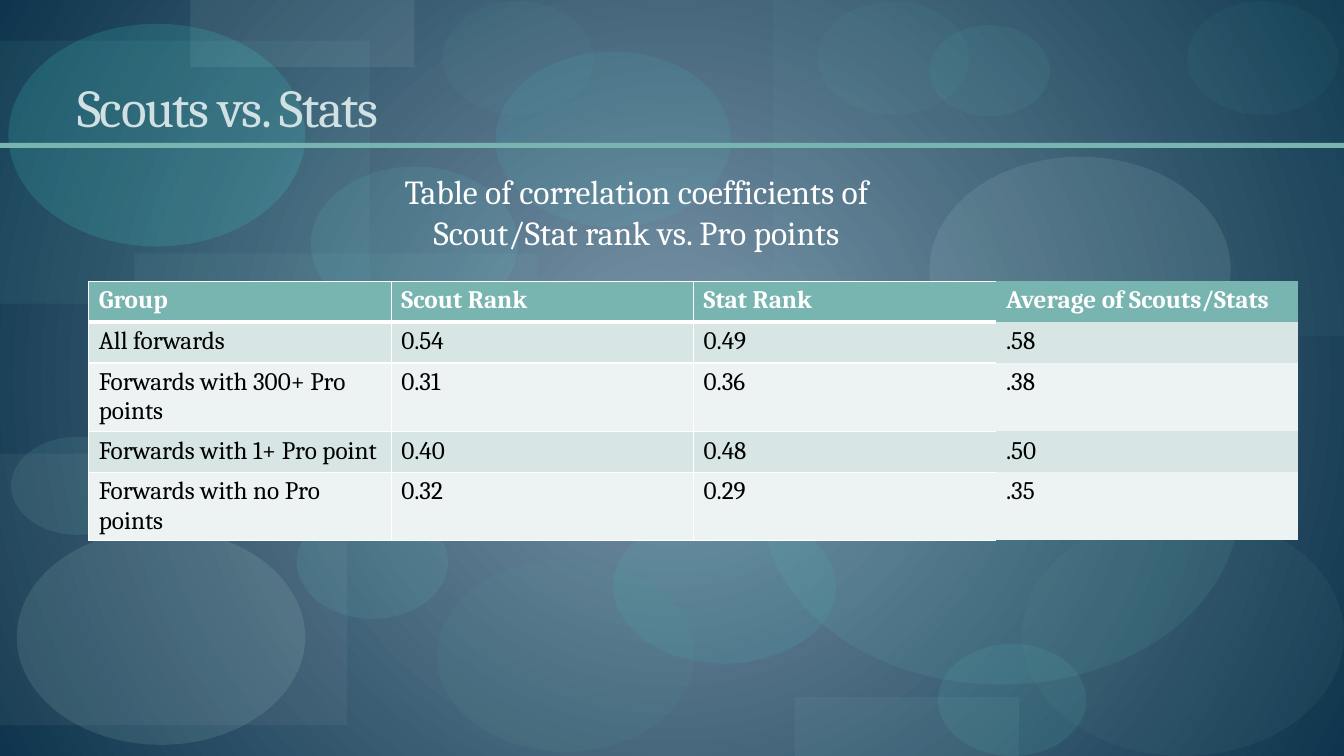
import pptx
import pptx.util
import pptx.dml.color
import pptx.enum.shapes
import pptx.enum.text
import pptx.oxml
import pptx.oxml.ns

Pt = pptx.util.Pt
FONT = "Cambria"
TEAL = "79B5B0"
WHITE = "FFFFFF"
NAMESPACE = pptx.oxml.ns.nsdecls("a")

RECTANGLES = [
    (96, 181, 288, 168, TEAL, 9),
    (552, 0, 408, 240, TEAL, 6),
    (0, 324, 248, 194, "B2B7BA", 8),
    (0, 29, 264, 188, "77D6CE", 7),
    (136, 0, 160, 48, "BED7D4", 10),
    (568, 498, 160, 42, TEAL, 10),
]
BUBBLES = [
    (312, 400, 184, 137, "549791", 13),
    (438, 188, 228, 171, "70A39E", 8),
    (670, 460, 106, 80, "65E8DC", 9),
    (664, 112, 215, 161, "C1E8E4", 11),
    (12, 378, 206, 154, "C1E8E4", 12),
    (212, 361, 108, 81, "65E8DC", 9),
    (438, 364, 159, 110, "44EADC", 8),
    (6, 17, 212, 159, "44EADC", 15),
    (8, 312, 94, 70, "97DCD6", 10),
    (222, 119, 148, 110, "65E8DC", 9),
    (354, 37, 168, 125, "44EADC", 8),
    (545, 234, 340, 255, "61CDC4", 10),
    (584, 1, 108, 81, "65E8DC", 4),
    (730, 367, 230, 173, "70A39E", 8),
    (168, 292, 125, 94, "97DCD6", 10),
    (664, 18, 86, 65, "65E8DC", 6),
    (848, 1, 108, 81, "65E8DC", 4),
    (316, 1, 108, 81, "65E8DC", 4),
]
CORRELATIONS = [
    ("Group", "Scout Rank", "Stat Rank", "Average of Scouts/Stats"),
    ("All forwards", "0.54", "0.49", ".58"),
    ("Forwards with 300+ Pro points", "0.31", "0.36", ".38"),
    ("Forwards with 1+ Pro point", "0.40", "0.48", ".50"),
    ("Forwards with no Pro points", "0.32", "0.29", ".35"),
]


def rgb(value):
    return pptx.dml.color.RGBColor.from_string(value)


def format_text(frame, size, color, bold=False):
    for para in frame.paragraphs:
        for span in para.runs:
            span.font.name = FONT
            span.font.size = Pt(size)
            span.font.bold = bold
            span.font.color.rgb = rgb(color)


def paint_background(page):
    fill = page.background.fill
    fill.gradient()
    for stop, color, position in zip(fill.gradient_stops, ("7B96AA", "0E354D"), (0, 1)):
        stop.color.rgb = rgb(color)
        stop.position = position
    linear = next(page.element.iter(pptx.oxml.ns.qn("a:lin")))
    circle = pptx.oxml.parse_xml(
        f'<a:path {NAMESPACE} path="circle">'
        '<a:fillToRect l="50000" t="50000" r="50000" b="50000"/></a:path>')
    linear.getparent().replace(linear, circle)


def add_panel(page, kind, left, top, width, height, color, opacity=100):
    panel = page.shapes.add_shape(kind, Pt(left), Pt(top), Pt(width), Pt(height))
    panel.shadow.inherit = False
    panel.line.fill.background()
    panel.fill.solid()
    panel.fill.fore_color.rgb = rgb(color)
    if opacity < 100:
        shade = next(panel.element.spPr.iter(pptx.oxml.ns.qn("a:srgbClr")))
        shade.append(pptx.oxml.parse_xml(
            f'<a:alpha {NAMESPACE} val="{opacity * 1000}"/>'))


def add_decoration(page, left, top):
    kinds = pptx.enum.shapes.MSO_SHAPE
    for kind, panels in ((kinds.RECTANGLE, RECTANGLES), (kinds.OVAL, BUBBLES)):
        for x, y, width, height, color, opacity in panels:
            add_panel(page, kind, left + x, top + y, width, height, color, opacity)


def add_heading(page, left, top, width, height):
    add_panel(page, pptx.enum.shapes.MSO_SHAPE.RECTANGLE, 0, top + height, 960, 3.6, TEAL)
    title = page.shapes.title
    title.element.getparent().append(title.element)
    title.left, title.top, title.width, title.height = map(Pt, (left, top, width, height))
    frame = title.text_frame
    frame.text = "Scouts vs. Stats"
    frame.vertical_anchor = pptx.enum.text.MSO_ANCHOR.BOTTOM
    frame.paragraphs[0].alignment = pptx.enum.text.PP_ALIGN.LEFT
    format_text(frame, 38, "D1E1E3")
    frame.paragraphs[0].runs[0].font.element.set("spc", "-100") if hasattr(
        frame.paragraphs[0].runs[0].font, "element"
    ) else frame.paragraphs[0].runs[0]._r.get_or_add_rPr().set("spc", "-100")


def set_borders(cell, widths):
    properties = cell._tc.get_or_add_tcPr()
    for index, side in enumerate("LRTB"):
        width = widths.get(side, 0)
        paint = (f'<a:solidFill><a:srgbClr val="{WHITE}"/></a:solidFill>'
                 if width else "<a:noFill/>")
        properties.insert(index, pptx.oxml.parse_xml(
            f'<a:ln{side} {NAMESPACE} w="{Pt(width)}">{paint}</a:ln{side}>'))


def add_correlations(page, left, top, width, row_height):
    rows, columns = len(CORRELATIONS), len(CORRELATIONS[0])
    table = page.shapes.add_table(
        rows, columns, Pt(left), Pt(top), Pt(width), Pt(row_height * rows)).table
    table.horz_banding = False
    for row, values in enumerate(CORRELATIONS):
        header = row == 0
        fill = TEAL if header else ("ECF3F2", "D7E5E4")[row % 2]
        for column, value in enumerate(values):
            cell = table.cell(row, column)
            cell.text_frame.text = value
            format_text(cell.text_frame, 18, WHITE if header else "000000", header)
            cell.fill.solid()
            cell.fill.fore_color.rgb = rgb(fill)
            widths = {}
            if column < columns - 1:
                widths = {"L": 1, "T": 3 if row == 1 else 1, "B": 3 if header else 1}
            if column < columns - 2:
                widths["R"] = 1
            set_borders(cell, widths)


def add_caption(page, left, top, width, height):
    box = page.shapes.add_textbox(Pt(left), Pt(top), Pt(width), Pt(height))
    frame = box.text_frame
    frame.word_wrap = True
    frame.auto_size = pptx.enum.text.MSO_AUTO_SIZE.SHAPE_TO_FIT_TEXT
    frame.margin_left = frame.margin_right = Pt(36)
    frame.text = "Table of correlation coefficients of Scout/Stat rank vs. Pro points"
    frame.paragraphs[0].alignment = pptx.enum.text.PP_ALIGN.CENTER
    format_text(frame, 24, WHITE)


def main():
    deck = pptx.Presentation()
    deck.slide_width, deck.slide_height = Pt(960), Pt(540)
    page = deck.slides.add_slide(deck.slide_layouts.get_by_name("Title Only"))
    paint_background(page)
    add_decoration(page, 0, 0)
    add_heading(page, 48, 12, 864, 90)
    add_correlations(page, 63.4, 200.9, 864, 29.2)
    add_caption(page, 231.8, 118.8, 445.7, 65.5)
    deck.save("out.pptx")


if __name__ == "__main__":
    main()
